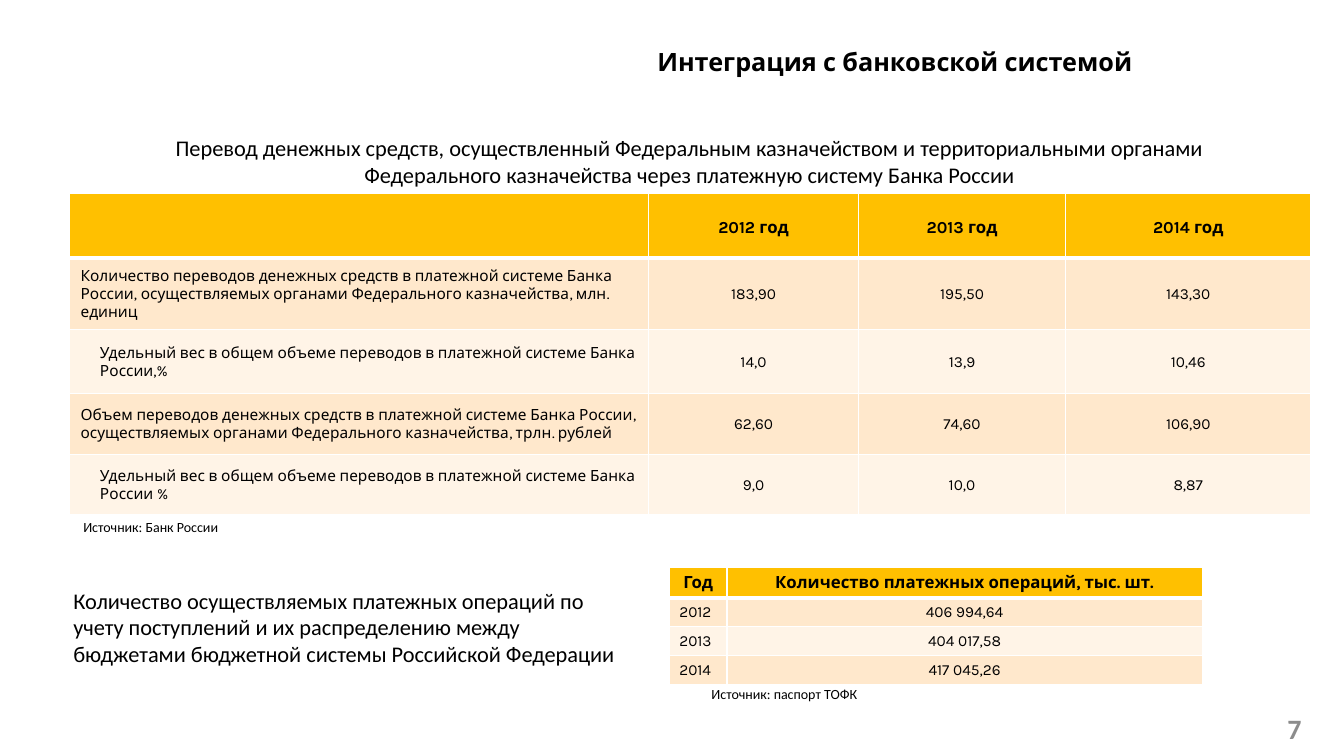
from lxml import etree
from pptx import Presentation
from pptx.dml.color import RGBColor
from pptx.enum.text import MSO_ANCHOR, PP_ALIGN
from pptx.oxml.ns import qn
from pptx.util import Cm, Pt

LEFT, CENTER = PP_ALIGN.LEFT, PP_ALIGN.CENTER
TOP, MIDDLE = MSO_ANCHOR.TOP, MSO_ANCHOR.MIDDLE
COLORS = {
    "text": "000000",
    "page": "8C8C8C",
    "header": "FFC000",
    "odd": "FFE8CC",
    "even": "FFF4E7",
    "border": "FFFFFF",
}
BODY_FONT, TABLE_FONT = "Calibri", "Karla"
WIDE_MARGINS = (0.25, 0.13, 0.25, 0.13)
TIGHT_MARGINS = (0.03, 0.03, 0.03, 0)


class SlideBuilder:
    def __init__(self, slide):
        self.slide = slide

    def style(self, paragraph, size, font, bold=False, color="text", align=LEFT):
        paragraph.alignment = align
        for run in paragraph.runs:
            run.font.size = Pt(size)
            run.font.name = font
            run.font.bold = bold
            run.font.color.rgb = RGBColor.from_string(COLORS[color])

    def text(self, box, wording, size, font=BODY_FONT, anchor=TOP, **style):
        frame = self.slide.shapes.add_textbox(*map(Cm, box)).text_frame
        frame.word_wrap = True
        frame.vertical_anchor = anchor
        frame.text = wording
        self.style(frame.paragraphs[0], size, font, **style)

    def border(self, cell, top, bottom):
        properties = cell._tc.get_or_add_tcPr()
        for side, width in (("L", 1), ("R", 1), ("T", top), ("B", bottom)):
            line = etree.SubElement(properties, qn(f"a:ln{side}"), w=str(Pt(width)))
            fill = etree.SubElement(line, qn("a:solidFill"))
            etree.SubElement(fill, qn("a:srgbClr"), val=COLORS["border"])

    def table(self, left, top, widths, heights, rows, anchor, margins, indents, header_spacing):
        table = self.slide.shapes.add_table(
            len(rows), len(widths), Cm(left), Cm(top), Cm(sum(widths)), Cm(sum(heights))
        ).table
        table.horz_banding = False
        for column, width in zip(table.columns, widths):
            column.width = Cm(width)
        for r, (values, height) in enumerate(zip(rows, heights)):
            table.rows[r].height = Cm(height)
            header = r == 0
            band = "header" if header else "odd" if r % 2 else "even"
            for c, value in enumerate(values):
                cell = table.cell(r, c)
                self.border(cell, 3 if r == 1 else 1, 3 if header else 1)
                cell.fill.solid()
                cell.fill.fore_color.rgb = RGBColor.from_string(COLORS[band])
                cell.vertical_anchor = anchor
                (cell.margin_left, cell.margin_top,
                 cell.margin_right, cell.margin_bottom) = map(
                    Cm, WIDE_MARGINS if header else margins)
                cell.text = value
                paragraph = cell.text_frame.paragraphs[0]
                centered = header or c > 0
                self.style(paragraph, 12 if header else 11, TABLE_FONT, bold=header,
                           align=CENTER if centered else LEFT)
                if header:
                    paragraph.line_spacing = header_spacing
                elif c == 0:
                    indent = indents[(r - 1) % len(indents)]
                    paragraph._p.get_or_add_pPr().set("marL", str(Cm(indent)))


def main():
    presentation = Presentation()
    presentation.slide_width, presentation.slide_height = Cm(33.87), Cm(19.05)
    page = SlideBuilder(presentation.slides.add_slide(presentation.slide_layouts[6]))

    page.text((11.28, 0, 22.55, 3.12), "Интеграция с банковской системой", 18,
              font=TABLE_FONT, anchor=MIDDLE, bold=True, align=CENTER)
    page.text((3.23, 3.25, 28.3, 1.63),
              "Перевод денежных средств, осуществленный Федеральным казначейством и "
              "территориальными органами Федерального казначейства через платежную "
              "систему Банка России", 16, align=CENTER)

    transfers = [
        ("", "2012 год", "2013 год", "2014 год"),
        ("Количество переводов денежных средств в платежной системе Банка России, "
         "осуществляемых органами Федерального казначейства, млн. единиц",
         "183,90", "195,50", "143,30"),
        ("Удельный вес в общем объеме переводов в платежной системе Банка России,%",
         "14,0", "13,9", "10,46"),
        ("Объем переводов денежных средств в платежной системе Банка России, "
         "осуществляемых органами Федерального казначейства, трлн. рублей",
         "62,60", "74,60", "106,90"),
        ("Удельный вес в общем объеме переводов в платежной системе Банка России %",
         "9,0", "10,0", "8,87"),
    ]
    page.table(1.75, 4.88, (14.6, 5.28, 5.23, 6.17), (1.63, 1.8, 1.6, 1.55, 1.5),
               transfers, MIDDLE, TIGHT_MARGINS, (0.25, 0.74), 1.15)
    page.text((1.85, 12.95, 4.42, 0.69), "Источник: Банк России", 10)

    page.text((1.6, 14.66, 14.6, 2.31),
              "Количество осуществляемых платежных операций по учету поступлений и их "
              "распределению между бюджетами бюджетной системы Российской Федерации", 16)
    operations = [
        ("Год", "Количество платежных операций, тыс. шт."),
        ("2012", "406 994,64"),
        ("2013", "404 017,58"),
        ("2014", "417 045,26"),
    ]
    page.table(16.87, 14.3, (1.45, 11.98), (0.76, 0.72, 0.72, 0.72),
               operations, TOP, WIDE_MARGINS, (0,), 1)
    page.text((17.68, 17.14, 12.57, 0.69), "Источник: паспорт ТОФК", 10)

    page.text((30.94, 17.85, 3.37, 1.02), "7", 20, anchor=MIDDLE,
              bold=True, color="page", align=CENTER)
    presentation.save("out.pptx")


if __name__ == "__main__":
    main()
